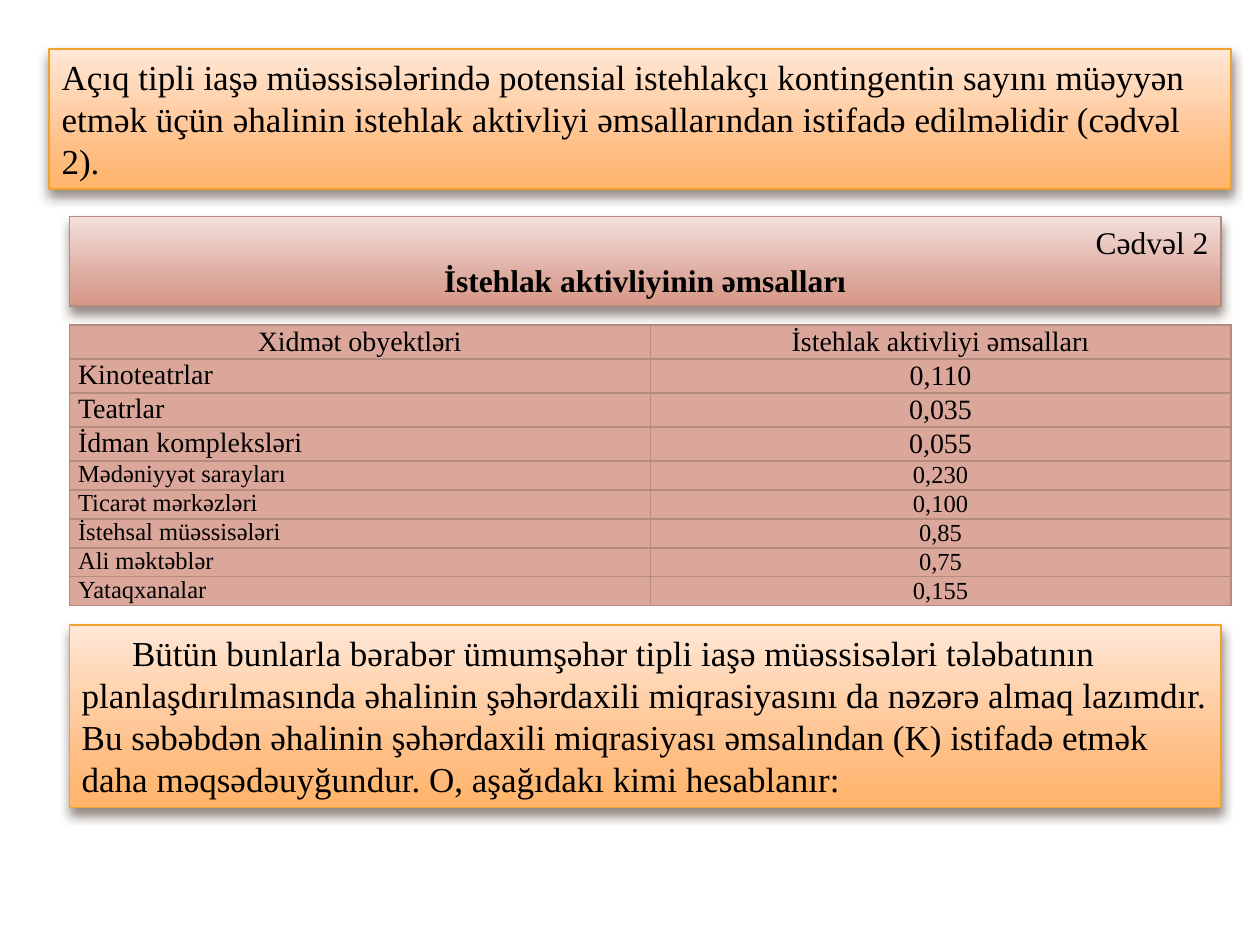
import pptx
import pptx.util
import pptx.dml.color
import pptx.enum.shapes
import pptx.enum.text
import pptx.oxml
import pptx.oxml.ns

Inches, Pt = pptx.util.Inches, pptx.util.Pt
ALIGN = pptx.enum.text.PP_ALIGN
ANCHOR = pptx.enum.text.MSO_ANCHOR
qn = pptx.oxml.ns.qn
NS = pptx.oxml.ns.nsdecls("a")

# Content
FONT = "Times New Roman"
ORANGE = {"stops": [(0, "FFE7D7"), (72, "FFBE84"), (100, "FFB468")], "line": "F0A22E"}
ROSE = {"stops": [(0, "F3E0DB"), (72, "DCA79B"), (100, "D89787")], "line": "B58B80"}
CELL_FILL = "DCA79B"

# Each panel: box, theme, paragraphs of (text, size, bold, alignment, first-line indent)
PANELS = [
    ((0.39, 0.39, 9.38, 1.11), ORANGE, [
        ("Açıq tipli iaşə müəssisələrində potensial istehlakçı kontingentin sayını "
         "müəyyən etmək üçün əhalinin istehlak aktivliyi əmsallarından istifadə "
         "edilməlidir (cədvəl 2).", 20, False, ALIGN.LEFT, 0)]),
    ((0.55, 4.96, 9.14, 1.45), ORANGE, [
        ("Bütün bunlarla bərabər ümumşəhər tipli iaşə müəssisələri tələbatının "
         "planlaşdırılmasında əhalinin şəhərdaxili miqrasiyasını da nəzərə almaq "
         "lazımdır. Bu səbəbdən əhalinin şəhərdaxili miqrasiyası əmsalından (K) "
         "istifadə etmək daha məqsədəuyğundur. O, aşağıdakı kimi hesablanır:",
         20, False, ALIGN.LEFT, 0.4)]),
    ((0.55, 1.72, 9.14, 0.71), ROSE, [
        ("Cədvəl 2", 18, False, ALIGN.RIGHT, 0),
        ("İstehlak aktivliyinin əmsalları", 18, True, ALIGN.CENTER, 0)]),
]

ROWS = [
    ("Xidmət obyektləri", "İstehlak aktivliyi əmsalları"),
    ("Kinoteatrlar", "0,110"),
    ("Teatrlar", "0,035"),
    ("İdman kompleksləri", "0,055"),
    ("Mədəniyyət sarayları", "0,230"),
    ("Ticarət mərkəzləri", "0,100"),
    ("İstehsal müəssisələri", "0,85"),
    ("Ali məktəblər", "0,75"),
    ("Yataqxanalar", "0,155"),
]
LARGE_ROWS = 4  # the first rows are set larger than the rest


def rgb(value):
    return pptx.dml.color.RGBColor.from_string(value)


def write(p, text, size, bold, align):
    p.text = text
    p.alignment = align
    for r in p.runs:
        r.font.name = FONT
        r.font.size = Pt(size)
        r.font.bold = bold
        r.font.color.rgb = rgb("000000")


def style_panel(sp, theme):
    sp.fill.gradient()
    sp.fill.gradient_angle = 270
    stops = sp._element.spPr.find(qn("a:gradFill")).find(qn("a:gsLst"))
    for old in list(stops):
        stops.remove(old)
    for pos, color in theme["stops"]:
        stops.append(pptx.oxml.parse_xml(
            f'<a:gs {NS} pos="{pos * 1000}"><a:srgbClr val="{color}"/></a:gs>'))
    sp.line.color.rgb = rgb(theme["line"])
    sp.line.width = Pt(0.79)
    sp.shadow.inherit = False
    sp._element.spPr.find(qn("a:effectLst")).append(pptx.oxml.parse_xml(
        f'<a:outerShdw {NS} blurRad="{Pt(6)}" dist="{Pt(4)}" dir="5400000" '
        'rotWithShape="0"><a:srgbClr val="4E3B30"><a:alpha val="60000"/>'
        '</a:srgbClr></a:outerShdw>'))


def add_panel(s, box, theme, paragraphs):
    sp = s.shapes.add_shape(pptx.enum.shapes.MSO_SHAPE.RECTANGLE, *map(Inches, box))
    style_panel(sp, theme)
    tf = sp.text_frame
    tf.word_wrap = True
    tf.auto_size = pptx.enum.text.MSO_AUTO_SIZE.SHAPE_TO_FIT_TEXT
    tf.vertical_anchor = ANCHOR.TOP
    for i, (text, size, bold, align, indent) in enumerate(paragraphs):
        p = tf.add_paragraph() if i else tf.paragraphs[0]
        write(p, text, size, bold, align)
        if indent:
            p._p.get_or_add_pPr().set("indent", str(Inches(indent)))


def style_cell(cell):
    cell.margin_left = cell.margin_right = Inches(0.07)
    cell.margin_top = cell.margin_bottom = 0
    tcPr = cell._tc.get_or_add_tcPr()
    for side in "LRTB":
        tcPr.append(pptx.oxml.parse_xml(
            f'<a:ln{side} {NS} w="{Pt(0.79)}"><a:solidFill>'
            f'<a:srgbClr val="{ROSE["line"]}"/></a:solidFill></a:ln{side}>'))
    cell.fill.solid()
    cell.fill.fore_color.rgb = rgb(CELL_FILL)


def add_coefficients(s):
    table = s.shapes.add_table(len(ROWS), 2, Inches(0.55), Inches(2.58),
                               Inches(9.22), Inches(2.23)).table
    for i, row in enumerate(ROWS):
        large = i < LARGE_ROWS
        table.rows[i].height = Inches(0.27 if large else 0.23)
        for j, text in enumerate(row):
            cell = table.cell(i, j)
            style_cell(cell)
            label = i > 0 and j == 0
            cell.vertical_anchor = ANCHOR.TOP if label else ANCHOR.MIDDLE
            write(cell.text_frame.paragraphs[0], text, 16 if large else 14, False,
                  ALIGN.JUSTIFY if label else ALIGN.CENTER)


def main():
    prs = pptx.Presentation()
    prs.slide_width, prs.slide_height = Inches(10), Inches(7.5)
    s = prs.slides.add_slide(prs.slide_layouts[6])
    add_coefficients(s)
    for panel in PANELS:
        add_panel(s, *panel)
    prs.save("out.pptx")


if __name__ == "__main__":
    main()
